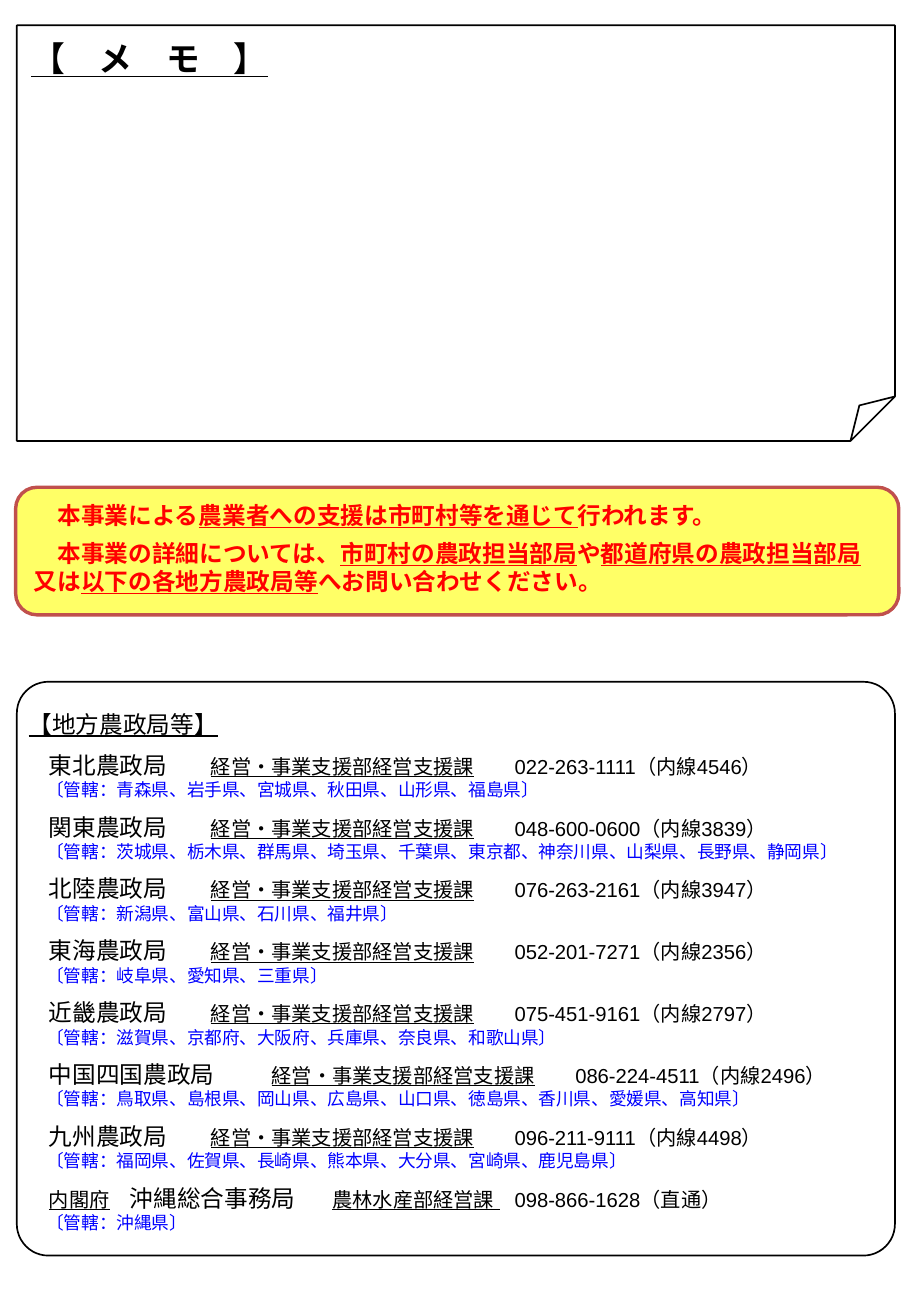
from lxml import etree
from pptx import Presentation
from pptx import util as u
from pptx.dml.color import RGBColor
from pptx.enum import shapes, text
from pptx.oxml.ns import qn

HUES = {"ink": "000000", "area": "0000FF", "alert": "FF0000",
        "note": "FFFF66", "edge": "C0504D"}
SANS, GOTHIC = "Arial", "Noto Sans CJK JP"
KIND = shapes.MSO_SHAPE
UNIT = "経営・事業支援部経営支援課"
TABS = (124, 287)

# Office, telephone, extension, prefectures
ROWS = [
    ("東北農政局", "022-263-1111", "4546", "青森県、岩手県、宮城県、秋田県、山形県、福島県"),
    ("関東農政局", "048-600-0600", "3839",
     "茨城県、栃木県、群馬県、埼玉県、千葉県、東京都、神奈川県、山梨県、長野県、静岡県"),
    ("北陸農政局", "076-263-2161", "3947", "新潟県、富山県、石川県、福井県"),
    ("東海農政局", "052-201-7271", "2356", "岐阜県、愛知県、三重県"),
    ("近畿農政局", "075-451-9161", "2797", "滋賀県、京都府、大阪府、兵庫県、奈良県、和歌山県"),
    ("中国四国農政局", "086-224-4511", "2496",
     "鳥取県、島根県、岡山県、広島県、山口県、徳島県、香川県、愛媛県、高知県"),
    ("九州農政局", "096-211-9111", "4498", "福岡県、佐賀県、長崎県、熊本県、大分県、宮崎県、鹿児島県"),
]


class Page:
    def __init__(self, deck):
        self.slide = deck.slides.add_slide(deck.slide_layouts[1])
        self.base = {"name": SANS, "size": 14, "bold": False,
                     "underline": False, "hue": "ink"}

    def place(self, item, x, y, w, h):
        box = dict(left=x, top=y, width=w, height=h)
        for key, val in box.items():
            setattr(item, key, u.Pt(val))

    def shape(self, kind, x, y, w, h, adj, line, wide, fill=None):
        item = self.slide.shapes.add_shape(kind, *map(u.Pt, (x, y, w, h)))
        item.shadow.inherit = False
        # Corner size, as a share of the short side
        geom = item._element.spPr.find(qn("a:prstGeom"))
        for old in list(geom):
            geom.remove(old)
        etree.SubElement(etree.SubElement(geom, qn("a:avLst")), qn("a:gd"),
                         name="adj", fmla=f"val {round(adj * 100000)}")
        item.line.color.rgb = RGBColor.from_string(HUES[line])
        item.line.width = u.Pt(wide)
        if fill:
            item.fill.solid()
            item.fill.fore_color.rgb = RGBColor.from_string(HUES[fill])
        else:
            item.fill.background()
        return item

    def frame(self, item, left=0, top=0, right=0):
        tf = item.text_frame
        form = dict(margin_left=u.Pt(left), margin_top=u.Pt(top),
                    margin_right=u.Pt(right), margin_bottom=0,
                    word_wrap=True, auto_size=text.MSO_AUTO_SIZE.NONE,
                    vertical_anchor=text.MSO_ANCHOR.TOP)
        for key, val in form.items():
            setattr(tf, key, val)
        return tf

    def para(self, tf, runs, first=False, lead=None, before=0,
             margin=0, indent=0, tabs=(), **style):
        par = tf.paragraphs[0] if first else tf.add_paragraph()
        prop = par._p.get_or_add_pPr()
        prop.set("marL", str(u.Pt(margin)))
        prop.set("indent", str(u.Pt(indent)))
        etree.SubElement(prop, qn("a:buNone"))
        if tabs:
            stops = etree.SubElement(prop, qn("a:tabLst"))
            for pos in tabs:
                etree.SubElement(stops, qn("a:tab"), pos=str(u.Pt(pos)), algn="l")
        par.alignment = text.PP_ALIGN.LEFT
        par.space_before, par.space_after = u.Pt(before), u.Pt(0)
        par.line_spacing = u.Pt(lead) if lead else 1.0
        for words, extra in runs:
            self.run(par, words, {**self.base, **style, **extra})

    def run(self, par, words, form):
        run = par.add_run()
        run.text = words
        form["size"] = u.Pt(form["size"])
        run.font.color.rgb = RGBColor.from_string(HUES[form.pop("hue")])
        for key, val in form.items():
            setattr(run.font, key, val)
        # East Asian typeface
        etree.SubElement(run.font._element, qn("a:ea"), typeface=form["name"])


def main():
    deck = Presentation()
    deck.slide_width, deck.slide_height = u.Inches(7.5), u.Inches(10.83)
    page = Page(deck)
    line = {"underline": True}
    small = {"size": 12}
    both = {**small, **line}

    # Memo sheet
    title, body = page.slide.placeholders
    page.place(title, 18.5, 22.3, 490, 34)
    page.para(page.frame(title), [("【　メ　モ　】", line)], first=True,
              name=GOTHIC, size=20, bold=True)
    page.shape(KIND.FOLDED_CORNER, 10, 15, 520.5, 246.3, 0.107, "ink", 1)

    # Notice
    note = page.shape(KIND.ROUNDED_RECTANGLE, 9.3, 288.7, 523.5, 75.6,
                      0.167, "edge", 2, "note")
    tf = page.frame(note, 7.2, 4.8, 7.2)
    form = dict(lead=16.5, indent=14, bold=True, hue="alert")
    page.para(tf, [("本事業による", {}), ("農業者への支援は市町村等を通じて", line),
                   ("行われます。", {})], first=True, **form)
    page.para(tf, [("本事業の詳細については、", {}), ("市町村の農政担当部局", line),
                   ("や", {}), ("都道府県の農政担当部局", line), ("又は", {}),
                   ("以下の各地方農政局等", line),
                   ("へお問い合わせください。", {})], before=6, **form)

    # Regional offices
    page.shape(KIND.ROUNDED_RECTANGLE, 10, 404, 520.5, 340, 0.055, "ink", 1)
    page.place(body, 17, 421.3, 510, 316)
    tf = page.frame(body)
    page.para(tf, [("【地方農政局等】", line)], first=True, lead=16)

    def office(runs, area, tabs):
        page.para(tf, [("　", small)] + runs, lead=16, before=8.2, tabs=tabs)
        page.para(tf, [(f"〔管轄：{area}〕", {})], lead=12.5, margin=10.5,
                  size=10.5, hue="area")

    for name, tel, ext, area in ROWS:
        office([(name + "\t", {}), (UNIT, both),
                (f"\t{tel}（内線{ext}）", small)], area, TABS)
    office([("内閣府", both), ("　", small), ("沖縄総合事務局\t", {}),
            ("農林水産部経営課 ", both), ("\t098-866-1628（直通）", small)],
           "沖縄県", (175.5, 291.5))

    deck.save("out.pptx")


if __name__ == "__main__":
    main()
